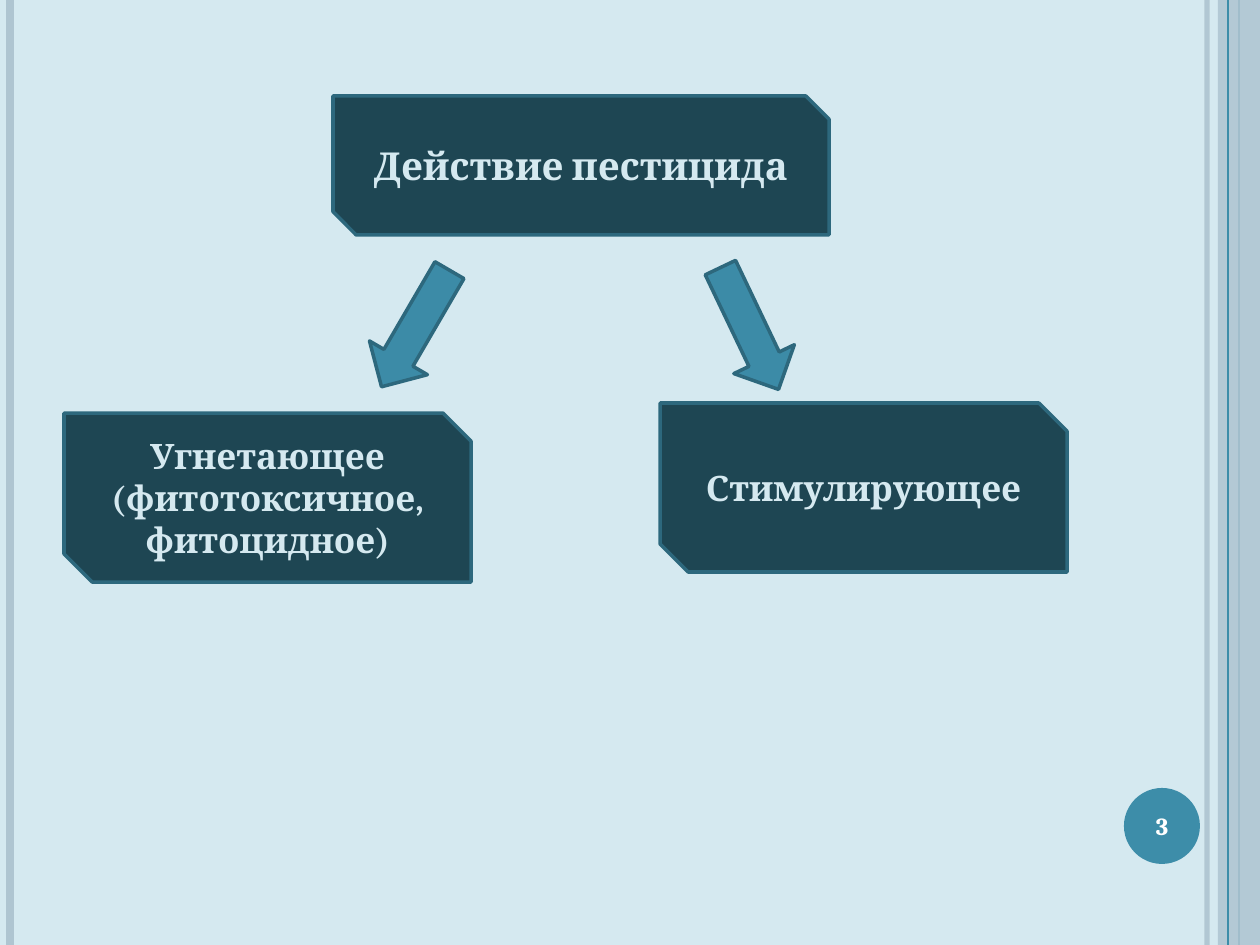
"""Build a slide that splits pesticide action into two kinds."""
from typing import NamedTuple

from lxml.etree import SubElement
from pptx import Presentation
from pptx.dml.color import RGBColor
from pptx.enum.shapes import MSO_CONNECTOR as Conn, MSO_SHAPE as Kind
from pptx.enum.text import MSO_ANCHOR as Anchor, PP_ALIGN as Align
from pptx.oxml.ns import qn
from pptx.util import Pt

SCALE = 914400 / 126
WIDE, HIGH = 1260, 945
PALE, GREY, TEAL = "D5E9F0", "AFC5D1", "3D8DA9"
DARK, EDGE, ARROW = "1E4653", "2D687D", "3C8BA7"
WHITE, FONT = "FFFFFF", "Cambria"


class Rule(NamedTuple):
    """A full-height vertical line."""
    x: int
    tint: str
    width: float
    alpha: int = 100


class Box(NamedTuple):
    """A labelled box with two snipped corners."""
    x: int
    y: int
    w: int
    h: int
    text: str
    size: int


class Arrow(NamedTuple):
    """A turned block arrow."""
    x: int
    turn: float


RULES = [Rule(1207, GREY, 3, 93), Rule(10, GREY, 4.5), Rule(1239, TEAL, 1.5)]
THIN = Rule(1228, TEAL, 0.75)
BOXES = [
    Box(333, 96, 496, 139, "Действие пестицида", 22),
    Box(64, 413, 407, 169, "Угнетающее (фитотоксичное, фитоцидное)", 20),
    Box(660, 403, 407, 169, "Стимулирующее", 20),
]
ARROWS = [Arrow(382, 30.2), Arrow(716, 334.5)]


def px(num: int) -> int:
    """Turn pixels into EMU."""
    return round(num * SCALE)


def paint(fill, tint: str, alpha: int = 100) -> None:
    """Give a fill one colour and an opacity in percent."""
    fill.solid()
    fill.fore_color.rgb = RGBColor.from_string(tint)
    if alpha < 100:
        node = fill._xPr.find(qn("a:solidFill"))[0]
        SubElement(node, qn("a:alpha"), val=str(alpha * 1000))


def rule(slide, item: Rule) -> None:
    """Draw one vertical line."""
    line = slide.shapes.add_connector(
        Conn.STRAIGHT, px(item.x), 0, px(item.x), px(HIGH))
    paint(line.line.fill, item.tint, item.alpha)
    line.line.width = Pt(item.width)
    SubElement(line._element.spPr, qn("a:effectLst"))


def block(slide, kind: Kind, area: tuple, tint: str, edge: str = "",
          alpha: int = 100):
    """Draw one filled shape, with an edge if a colour is given."""
    shape = slide.shapes.add_shape(kind, *map(px, area))
    shape.shadow.inherit = False
    paint(shape.fill, tint, alpha)
    if edge:
        paint(shape.line.fill, edge)
        shape.line.width = Pt(2)
    else:
        shape.line.fill.background()
    return shape


def label(shape, text: str, size: int, tint: str) -> None:
    """Write bold centred text in a shape."""
    frame = shape.text_frame
    frame.word_wrap = True
    frame.vertical_anchor = Anchor.MIDDLE
    par = frame.paragraphs[0]
    par.alignment = Align.CENTER
    run = par.add_run()
    run.text = text
    font = run.font
    font.name, font.size, font.bold = FONT, Pt(size), True
    font.color.rgb = RGBColor.from_string(tint)


def main() -> None:
    """Build and save the slide."""
    deck = Presentation()
    deck.slide_width, deck.slide_height = px(WIDE), px(HIGH)
    slide = deck.slides.add_slide(deck.slide_layouts[6])
    paint(slide.background.fill, PALE)
    for item in RULES:
        rule(slide, item)
    block(slide, Kind.RECTANGLE, (1218, 0, 42, HIGH), GREY, alpha=87)
    rule(slide, THIN)
    block(slide, Kind.OVAL, (1124, 788, 76, 76), TEAL)
    for box in BOXES:
        shape = block(slide, Kind.SNIP_2_DIAG_RECTANGLE, box[:4], DARK, EDGE)
        label(shape, box.text, box.size, PALE)
    for item in ARROWS:
        shape = block(slide, Kind.DOWN_ARROW, (item.x, 261, 67, 135),
                      ARROW, EDGE)
        shape.rotation = item.turn
    area = map(px, (1120, 790, 84, 72))
    label(slide.shapes.add_textbox(*area), "3", 14, WHITE)
    deck.save("out.pptx")


if __name__ == "__main__":
    main()
